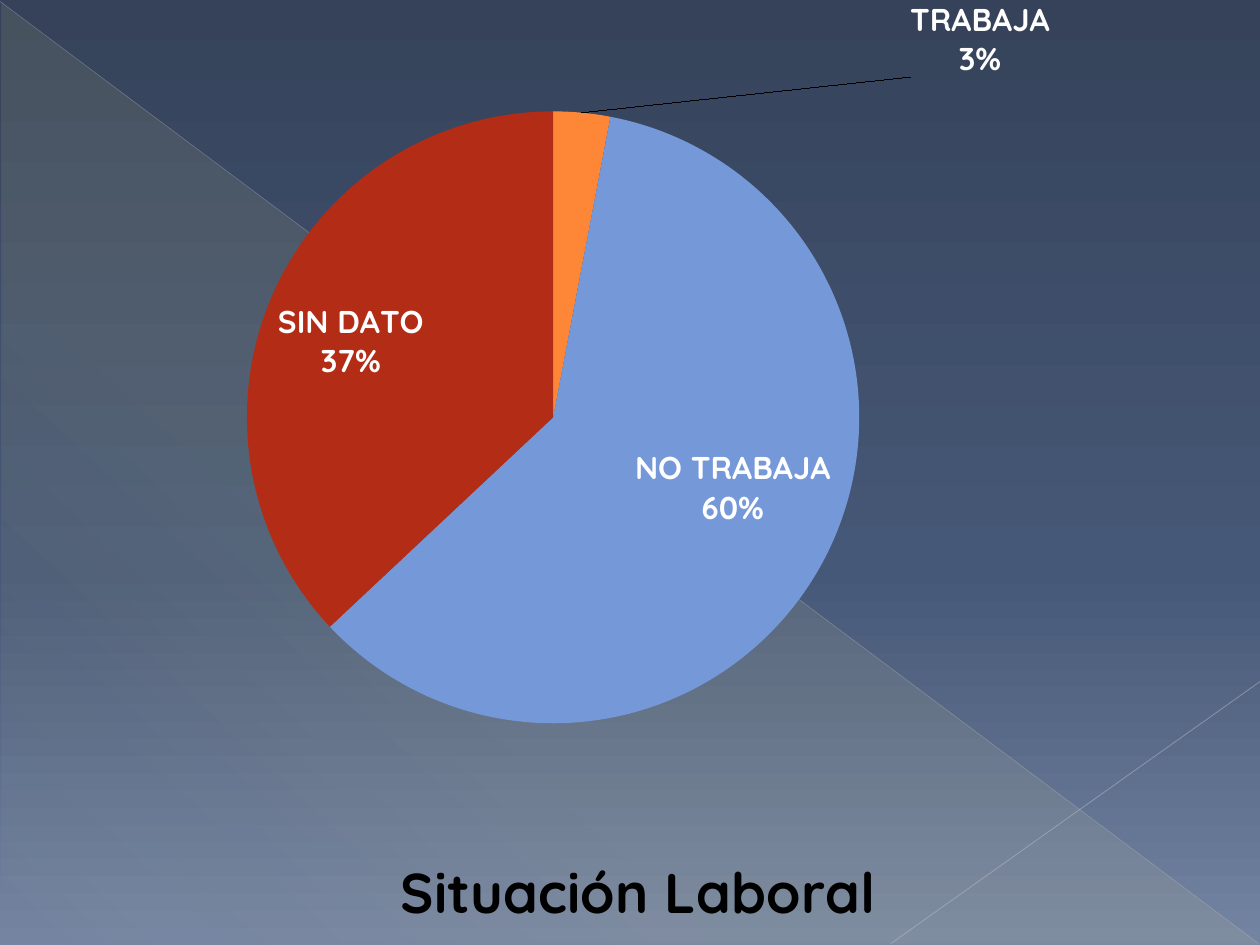
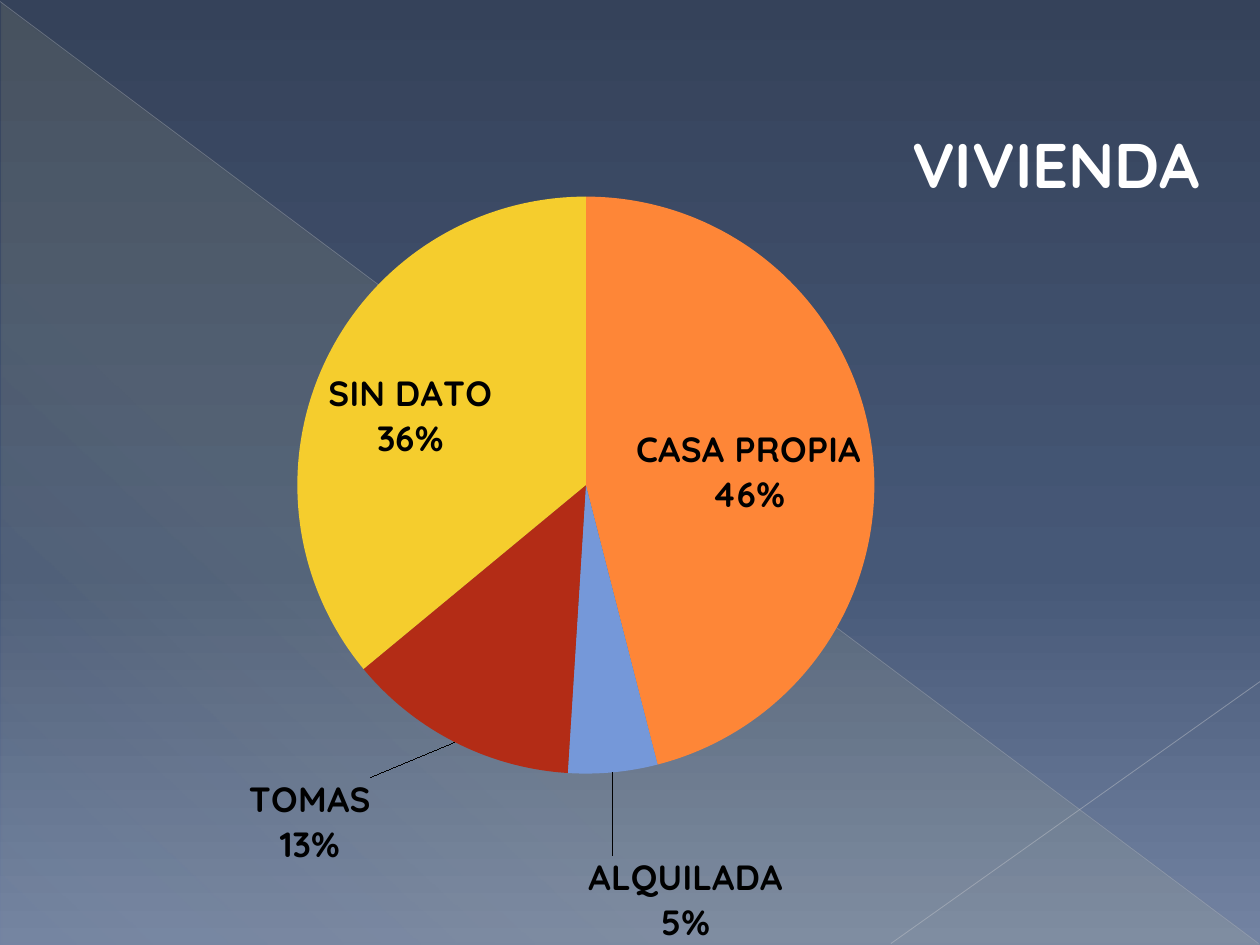
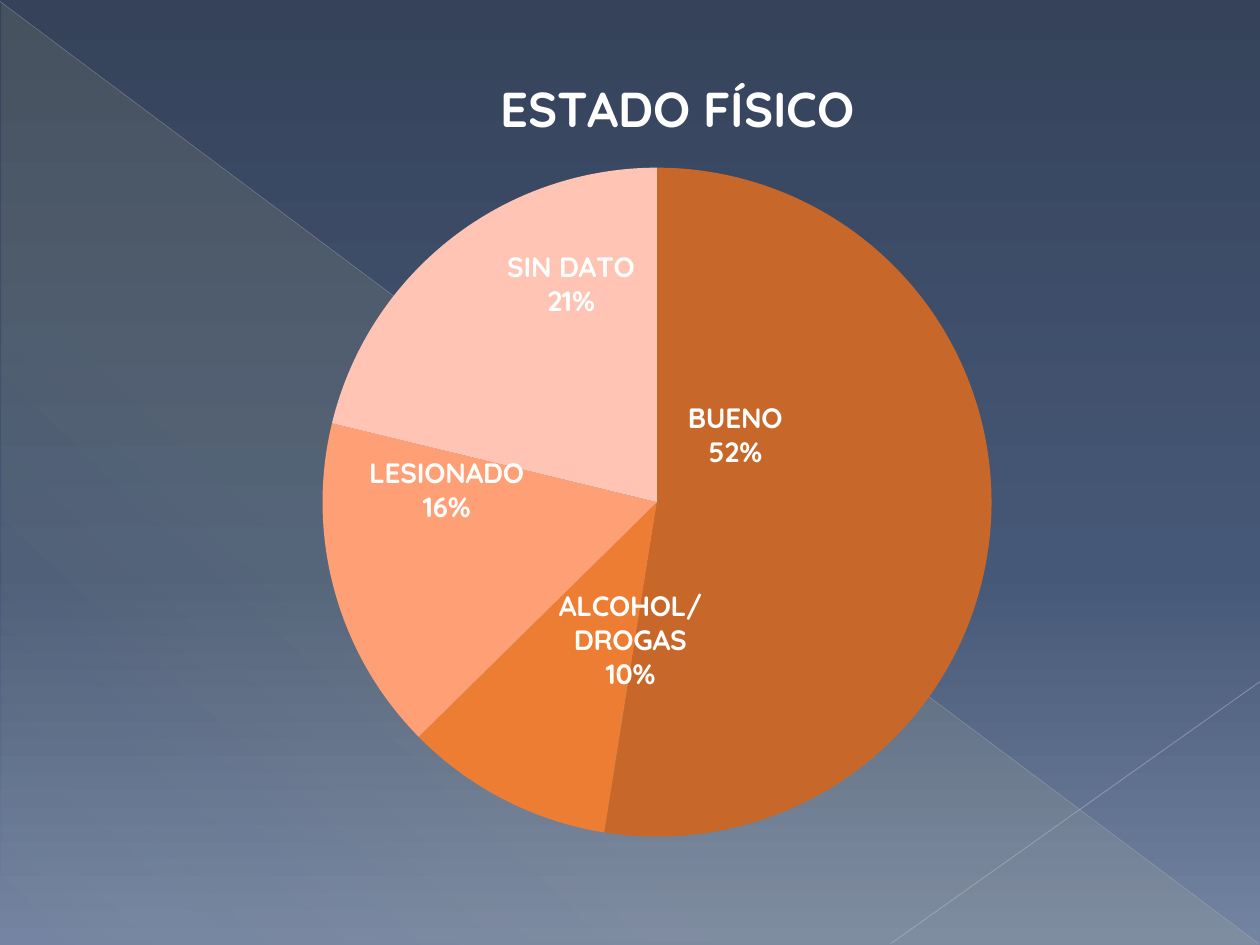
from copy import deepcopy
from dataclasses import dataclass

from lxml.etree import SubElement
from pptx import Presentation
from pptx.chart.data import CategoryChartData as ChartData
from pptx.dml.color import RGBColor as Rgb
from pptx.enum.chart import XL_CHART_TYPE as ChartType, XL_LABEL_POSITION as LabelPosition
from pptx.enum.shapes import MSO_CONNECTOR as Connector, MSO_SHAPE as Shape
from pptx.oxml.ns import qn
from pptx.util import Cm, Pt


@dataclass(frozen=True)
class Theme:
    """Colours, font and type sizes shared by the slides."""

    font: str = "Quicksand"
    white: str = "FFFFFF"
    black: str = "000000"
    sky: tuple = ((0, "35425A", 100), (60, "465877", 100), (100, "7383A2", 100))
    glow: tuple = ((0, "FFF39D", 10), (70, "FFF39D", 8), (100, "FFF39D", 1))
    diagonal: str = "BABDC4"
    corner: str = "C1C4CA"
    slices: tuple = ("FE8637", "7598D9", "B32C16", "F5CD2D")
    oranges: tuple = ("C7682A", "ED7D32", "FF9F75", "FFC4B3")
    base_size: int = 10


THEME = Theme()
WIDTH, HEIGHT = Cm(25.4), Cm(19.05)


def style_font(font, size, color, bold=True):
    """Apply the theme font with a size, colour and weight."""
    font.name, font.size, font.bold = THEME.font, Pt(size), bold
    font.color.rgb = Rgb.from_string(color)


def write(text_frame, text, **style):
    """Put formatted text into a text frame."""
    text_frame.text = text
    style_font(text_frame.paragraphs[0].runs[0].font, **style)


def add_node(parent, tag, **attributes):
    """Append an XML child with the given attributes."""
    return SubElement(parent, qn(tag), {key: str(value) for key, value in attributes.items()})


def fill_gradient(fill, owner, stops, angle):
    """Fill with stops of position, colour and opacity in percent."""
    fill.gradient()
    gradient = next(owner.iter(qn("a:gradFill")))
    stop_list = gradient.find(qn("a:gsLst"))
    stop_list.clear()
    for position, color, opacity in stops:
        stop = add_node(stop_list, "a:gs", pos=position * 1000)
        add_node(add_node(stop, "a:srgbClr", val=color), "a:alpha", val=opacity * 1000)
    gradient.find(qn("a:lin")).set("ang", str(angle * 60000))


def add_ray(slide, start, end, color, width, opacity):
    """Draw a thin translucent line."""
    ray = slide.shapes.add_connector(Connector.STRAIGHT, *map(Cm, start + end))
    ray.line.width = Pt(width)
    ray.line.color.rgb = Rgb.from_string(color)
    tint = next(ray.element.spPr.iter(qn("a:srgbClr")))
    add_node(tint, "a:alpha", val=opacity * 1000)
    add_node(ray.element.spPr, "a:effectLst")


def build_backdrop(master, slide):
    """Draw the shared backdrop and move it to the master."""
    fill_gradient(master.background.fill, master.element, THEME.sky, 90)
    glow = slide.shapes.add_shape(Shape.RIGHT_TRIANGLE, Cm(0.03), Cm(0.05), Cm(25.37), Cm(19))
    glow.shadow.inherit = False
    glow.line.fill.background()
    fill_gradient(glow.fill, glow.element, THEME.glow, 133)
    add_ray(slide, (0, 0.03), (25.37, 19.02), THEME.diagonal, 0.39, 35)
    add_ray(slide, (25.4, 13.74), (17.96, 19.02), THEME.corner, 0.47, 45)
    for number, part in enumerate(list(slide.shapes), 10):
        next(part.element.iter(qn("p:cNvPr"))).set("id", str(number))
        master.shapes.element.append(part.element)


def place(parent, index, **settings):
    """Give a chart part a manual layout."""
    for previous in parent.findall(qn("c:layout")):
        parent.remove(previous)
    layout = add_node(parent, "c:layout")
    parent.insert(index, layout)
    manual = add_node(layout, "c:manualLayout")
    for name, value in settings.items():
        add_node(manual, f"c:{name}", val=value)


def label_slices(series, chart, size, color, offsets):
    """Label slices with name and percentage, shifting some of them."""
    labels = series.data_labels
    labels.show_category_name = labels.show_value = True
    labels.number_format, labels.number_format_is_linked = '0"%"', False
    labels.position = LabelPosition.BEST_FIT
    style_font(labels.font, size, color)
    group = next(chart.element.iter(qn("c:dLbls")))
    separator = add_node(group, "c:separator")
    separator.text = "\n"
    group.find(qn("c:showBubbleSize")).addnext(separator)
    shared = [part for part in group if part.tag != qn("c:showLeaderLines")]
    for order, (index, (x, y)) in enumerate(sorted(offsets.items())):
        label = add_node(group, "c:dLbl")
        group.insert(order, label)
        add_node(label, "c:idx", val=index)
        place(label, 1, x=x, y=y)
        label.extend(deepcopy(part) for part in shared)


def add_pie(slide, title, title_at, title_style, plot, shares, colors, label_style, offsets):
    """Add a full-slide pie with its title and slice labels."""
    data = ChartData()
    data.categories = list(shares)
    data.add_series("Series 1", list(shares.values()))
    chart = slide.shapes.add_chart(ChartType.PIE, 0, 0, WIDTH, HEIGHT, data).chart
    style_font(chart.font, THEME.base_size, THEME.white, bold=False)
    chart.has_legend = False
    write(chart.chart_title.text_frame, title, **title_style)
    title_x, title_y = title_at
    place(next(chart.element.iter(qn("c:title"))), 1,
          xMode="edge", yMode="edge", x=title_x, y=title_y)
    x, y, w, h = plot
    place(next(chart.element.iter(qn("c:plotArea"))), 0,
          layoutTarget="inner", xMode="edge", yMode="edge", x=x, y=y, w=w, h=h)
    chart.plots[0].vary_by_categories = True
    series = chart.plots[0].series[0]
    for index, color in zip(range(len(shares)), colors):
        slice_format = series.points[index].format
        slice_format.fill.solid()
        slice_format.fill.fore_color.rgb = Rgb.from_string(color)
        slice_format.line.fill.background()
    label_slices(series, chart, offsets=offsets, **label_style)


def main():
    """Build the three survey slides."""
    deck = Presentation()
    deck.slide_width, deck.slide_height = WIDTH, HEIGHT
    work, housing, health = [deck.slides.add_slide(deck.slide_layouts[6]) for _ in range(3)]
    build_backdrop(deck.slide_master, work)
    add_pie(
        work, "Situación Laboral", (0.31, 0.89), dict(size=32, color=THEME.black),
        plot=(0.032, 0.118, 0.814, 0.648),
        shares={"TRABAJA": 3, "NO TRABAJA": 60, "SIN DATO": 37},
        colors=THEME.slices, label_style=dict(size=18, color=THEME.white),
        offsets={0: (0.26, -0.03)},
    )
    add_pie(
        housing, "VIVIENDA", (0.715, 0.113), dict(size=36, color=THEME.white),
        plot=(0.236, 0.132, 0.458, 0.763),
        shares={"CASA PROPIA": 46, "ALQUILADA": 5, "TOMAS": 13, "SIN DATO": 36},
        colors=THEME.slices, label_style=dict(size=20, color=THEME.black),
        offsets={1: (-0.02, 0.08), 2: (-0.064, 0.03)},
    )
    add_pie(
        health, "ESTADO FÍSICO", (0.39, 0.068), dict(size=28, color=THEME.white),
        plot=(0.256, 0.177, 0.531, 0.709),
        shares={"BUENO": 52, "ALCOHOL/DROGAS": 10, "LESIONADO": 16, "SIN DATO": 21},
        colors=THEME.oranges, label_style=dict(size=16, color=THEME.white),
        offsets={0: (-0.246, -0.1), 1: (0.16, -0.23), 2: (0.156, -0.145), 3: (0.15, 0.09)},
    )
    deck.save("out.pptx")


if __name__ == "__main__":
    main()
